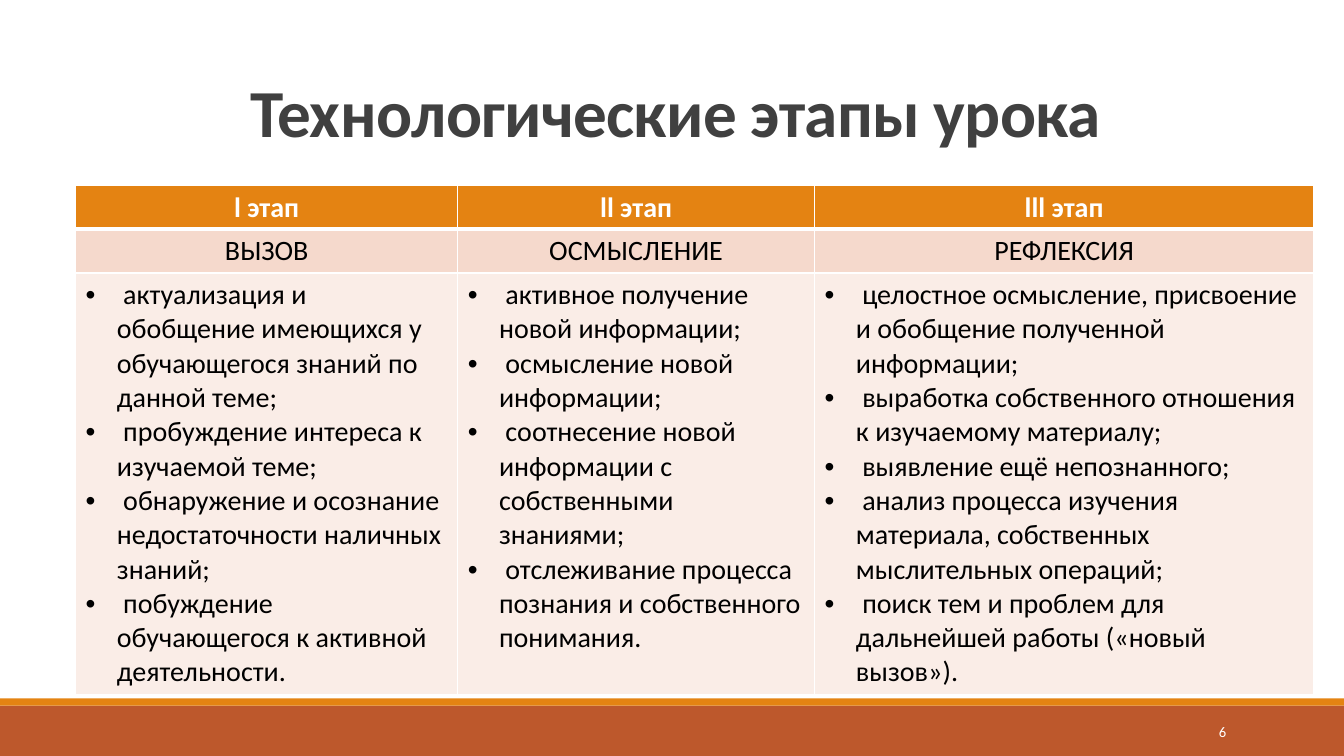
from lxml import etree
from pptx import Presentation
from pptx.dml.color import RGBColor
from pptx.enum import shapes, text
from pptx.oxml import ns
from pptx.util import Inches, Pt

COLORS = {
    "title": "404040", "white": "FFFFFF", "black": "000000",
    "orange": "E48312", "rust": "BD582C", "stage": "F5D9CC", "goals": "FAEDE7",
}
STAGES = [
    ("l этап", "ВЫЗОВ", 3.79, [
        "актуализация и обобщение имеющихся у обучающегося знаний по данной теме;",
        "пробуждение интереса к изучаемой теме;",
        "обнаружение и осознание недостаточности наличных знаний;",
        "побуждение обучающегося к активной деятельности.",
    ]),
    ("ll этап", "ОСМЫСЛЕНИЕ", 3.54, [
        "активное получение новой информации;",
        "осмысление новой информации;",
        "соотнесение новой информации с собственными знаниями;",
        "отслеживание процесса познания и собственного понимания.",
    ]),
    ("lll этап", "РЕФЛЕКСИЯ", 4.95, [
        "целостное осмысление, присвоение и обобщение полученной информации;",
        "выработка собственного отношения к изучаемому материалу;",
        "выявление ещё непознанного;",
        "анализ процесса изучения материала, собственных мыслительных операций;",
        "поиск тем и проблем для дальнейшей работы («новый вызов»).",
    ]),
]
ROW_HEIGHTS = [0.43, 0.43, 4.18]


def style(paragraph, size, color, bold=False, align=text.PP_ALIGN.LEFT):
    paragraph.alignment = align
    paragraph.font.name = "Calibri"
    paragraph.font.size = Pt(size)
    paragraph.font.bold = bold
    paragraph.font.color.rgb = RGBColor.from_string(COLORS[color])


def add_border(cell, side, points):
    """Draw a white line on one side (L, R, T or B); call before filling the cell."""
    properties = cell._tc.get_or_add_tcPr()
    line = etree.SubElement(properties, ns.qn(f"a:ln{side}"), w=str(Pt(points)))
    fill = etree.SubElement(line, ns.qn("a:solidFill"))
    etree.SubElement(fill, ns.qn("a:srgbClr"), val=COLORS["white"])


deck = Presentation()
deck.slide_width, deck.slide_height = Inches(13.33), Inches(7.5)
slide = deck.slides.add_slide(deck.slide_layouts[6])

# Footer bands
for top, height, color in [(7, 0.5, "rust"), (6.93, 0.07, "orange")]:
    band = slide.shapes.add_shape(
        shapes.MSO_SHAPE.RECTANGLE, 0, Inches(top), deck.slide_width, Inches(height))
    band.shadow.inherit = False
    band.fill.solid()
    band.fill.fore_color.rgb = RGBColor.from_string(COLORS[color])
    band.line.fill.background()

# Title
title = slide.shapes.add_textbox(Inches(1.2), Inches(0.31), Inches(11), Inches(1.24)).text_frame
title.word_wrap = True
title.vertical_anchor = text.MSO_ANCHOR.BOTTOM
heading = title.paragraphs[0]
heading.text = "Технологические этапы урока"
heading.line_spacing = 0.85
style(heading, 48, "title", bold=True, align=text.PP_ALIGN.CENTER)
heading.runs[0]._r.get_or_add_rPr().set("spc", "-50")

# Stages table
stages = slide.shapes.add_table(
    len(ROW_HEIGHTS), len(STAGES), Inches(0.75), Inches(1.84),
    Inches(12.28), Inches(sum(ROW_HEIGHTS))).table
stages.horz_banding = False
for row, height in zip(stages.rows, ROW_HEIGHTS):
    row.height = Inches(height)

for column, (number, name, width, goals) in enumerate(STAGES):
    stages.columns[column].width = Inches(width)
    header, stage, goal_list = (stages.cell(row, column) for row in range(3))
    for cell, fill, top, bottom in [
        (header, "orange", 1, 3), (stage, "stage", 3, 1), (goal_list, "goals", 1, 1),
    ]:
        for side, points in [("L", 1), ("R", 1), ("T", top), ("B", bottom)]:
            add_border(cell, side, points)
        cell.fill.solid()
        cell.fill.fore_color.rgb = RGBColor.from_string(COLORS[fill])

    header.text = number
    style(header.text_frame.paragraphs[0], 20, "white", bold=True, align=text.PP_ALIGN.CENTER)
    stage.text = name
    style(stage.text_frame.paragraphs[0], 20, "black", align=text.PP_ALIGN.CENTER)

    goal_list.text = "\n".join(f" {goal}" for goal in goals)
    for goal in goal_list.text_frame.paragraphs:
        properties = goal._p.get_or_add_pPr()
        properties.set("marL", str(Inches(0.31)))
        properties.set("indent", str(Inches(-0.31)))
        etree.SubElement(properties, ns.qn("a:buFont"), typeface="Arial")
        etree.SubElement(properties, ns.qn("a:buChar"), char="•")
        style(goal, 20, "black")

# Slide number
footer = slide.shapes.add_textbox(Inches(10.83), Inches(7.06), Inches(1.43), Inches(0.4)).text_frame
footer.word_wrap = True
footer.vertical_anchor = text.MSO_ANCHOR.MIDDLE
footer.text = "6"
style(footer.paragraphs[0], 10.5, "white", align=text.PP_ALIGN.RIGHT)

deck.save("out.pptx")
